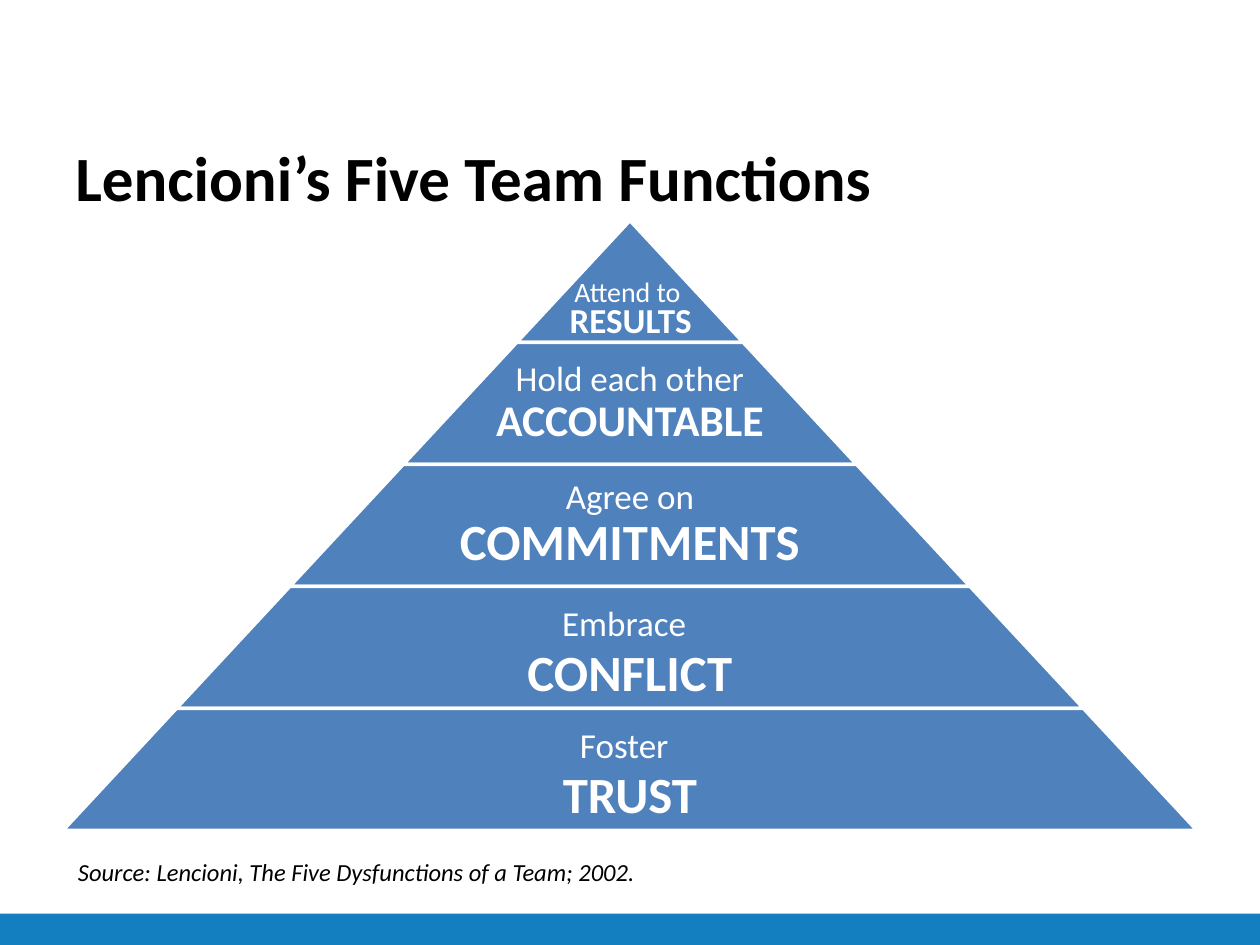
"""Build a slide showing five team functions as a pyramid."""
from dataclasses import dataclass

import pptx
import pptx.dml.color
import pptx.enum.shapes
import pptx.enum.text
import pptx.util

WIDTH, HEIGHT = 10, 7.5
MARGIN = 0.05 * WIDTH
PYRAMID_TOP = 1.75
PYRAMID_WIDTH = WIDTH - 2 * MARGIN
PYRAMID_HEIGHT = 4.84
TEXT_SHARE = 0.65
FONT = "Calibri"
BLACK, WHITE = "000000", "FFFFFF"
BAND_BLUE, FOOTER_BLUE = "4F81BD", "137FC1"


@dataclass(frozen=True)
class Part:
    """A piece of text with its own size and style."""

    text: str
    size: float
    bold: bool = False
    italic: bool = False


@dataclass(frozen=True)
class Box:
    """A rectangle in inches."""

    left: float
    top: float
    width: float
    height: float

    def lengths(self) -> list[int]:
        """Return the four lengths in slide units."""
        return [pptx.util.Inches(value) for value in (self.left, self.top, self.width, self.height)]


BANDS = [
    (),
    (Part("Hold each other ", 20), Part("ACCOUNTABLE", 25, True)),
    (Part("Agree on ", 20), Part("COMMITMENTS", 29, True)),
    (Part("Embrace", 20), Part(" \nCONFLICT", 29, True)),
    (Part("Foster", 20), Part(" \nTRUST", 29, True)),
]


def color(value: str) -> pptx.dml.color.RGBColor:
    """Turn a hex string into a colour."""
    return pptx.dml.color.RGBColor.from_string(value)


def add_filled_shape(slide, kind, box: Box, fill: str, line_width: float = 0):
    """Add a flat shape with an optional white outline."""
    shape = slide.shapes.add_shape(kind, *box.lengths())
    shape.shadow.inherit = False
    shape.fill.solid()
    shape.fill.fore_color.rgb = color(fill)
    if line_width:
        shape.line.color.rgb = color(WHITE)
        shape.line.width = pptx.util.Pt(line_width)
    else:
        shape.line.fill.background()
    return shape


def add_text(slide, box: Box, parts: tuple[Part, ...], text_color: str, centered: bool = False,
             middle: bool = False, spacing=None, inset: float | None = None) -> None:
    """Add a wrapped text box holding one paragraph."""
    frame = slide.shapes.add_textbox(*box.lengths()).text_frame
    frame.word_wrap = True
    anchors = pptx.enum.text.MSO_ANCHOR
    frame.vertical_anchor = anchors.MIDDLE if middle else anchors.TOP
    if inset is not None:
        frame.margin_left = frame.margin_right = pptx.util.Inches(inset)
        frame.margin_top = frame.margin_bottom = pptx.util.Inches(inset)
    paragraph = frame.paragraphs[0]
    paragraph.font.name = FONT
    paragraph.font.color.rgb = color(text_color)
    if centered:
        paragraph.alignment = pptx.enum.text.PP_ALIGN.CENTER
    if spacing is not None:
        paragraph.line_spacing = spacing
    for part in parts:
        for index, line in enumerate(part.text.split("\n")):
            if index:
                paragraph.add_line_break()
            if line:
                run = paragraph.add_run()
                run.text = line
                run.font.size = pptx.util.Pt(part.size)
                run.font.bold = part.bold
                run.font.italic = part.italic


def add_pyramid(slide) -> None:
    """Stack trapezoids that widen by an equal step."""
    height = PYRAMID_HEIGHT / len(BANDS)
    step = PYRAMID_WIDTH / len(BANDS)
    for row, parts in enumerate(BANDS):
        width = step * (row + 1)
        top = PYRAMID_TOP + row * height
        band = add_filled_shape(slide, pptx.enum.shapes.MSO_SHAPE.TRAPEZOID,
                                Box((WIDTH - width) / 2, top, width, height), BAND_BLUE, 2)
        band.adjustments[0] = step / 2 / height
        if parts:
            text_width = width * TEXT_SHARE
            add_text(slide, Box((WIDTH - text_width) / 2, top, text_width, height), parts, WHITE,
                     centered=True, middle=True, spacing=0.9, inset=0.03)


def main() -> None:
    """Create and save the presentation."""
    presentation = pptx.Presentation()
    presentation.slide_width = pptx.util.Inches(WIDTH)
    presentation.slide_height = pptx.util.Inches(HEIGHT)
    slide = presentation.slides.add_slide(presentation.slide_layouts[6])
    add_filled_shape(slide, pptx.enum.shapes.MSO_SHAPE.RECTANGLE,
                     Box(0, HEIGHT - 0.25, WIDTH, 0.25), FOOTER_BLUE)
    add_text(slide, Box(MARGIN, 1.05, PYRAMID_WIDTH, 0.7),
             (Part("Lencioni’s Five Team Functions", 36, True),), BLACK, middle=True)
    add_pyramid(slide)
    add_text(slide, Box(0.52, 6.75, 7.25, 0.34),
             (Part("Source: Lencioni, The Five Dysfunctions of a Team; 2002.", 14, italic=True),), BLACK)
    add_text(slide, Box(4.38, 2.15, 1.25, 0.62),
             (Part("Attend to \n", 16), Part("RESULTS", 20, True)), WHITE,
             centered=True, spacing=pptx.util.Pt(18))
    presentation.save("out.pptx")


if __name__ == "__main__":
    main()
